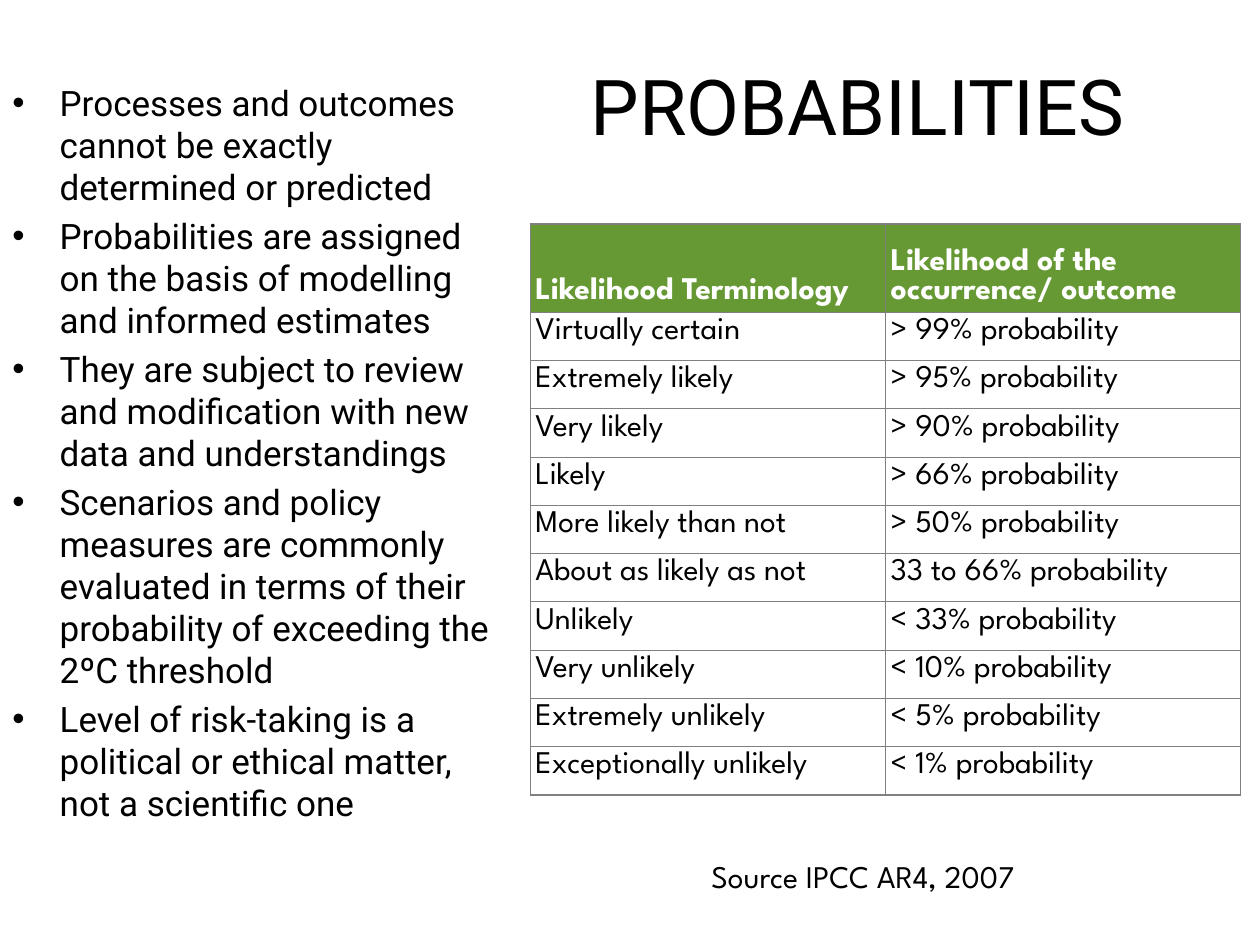
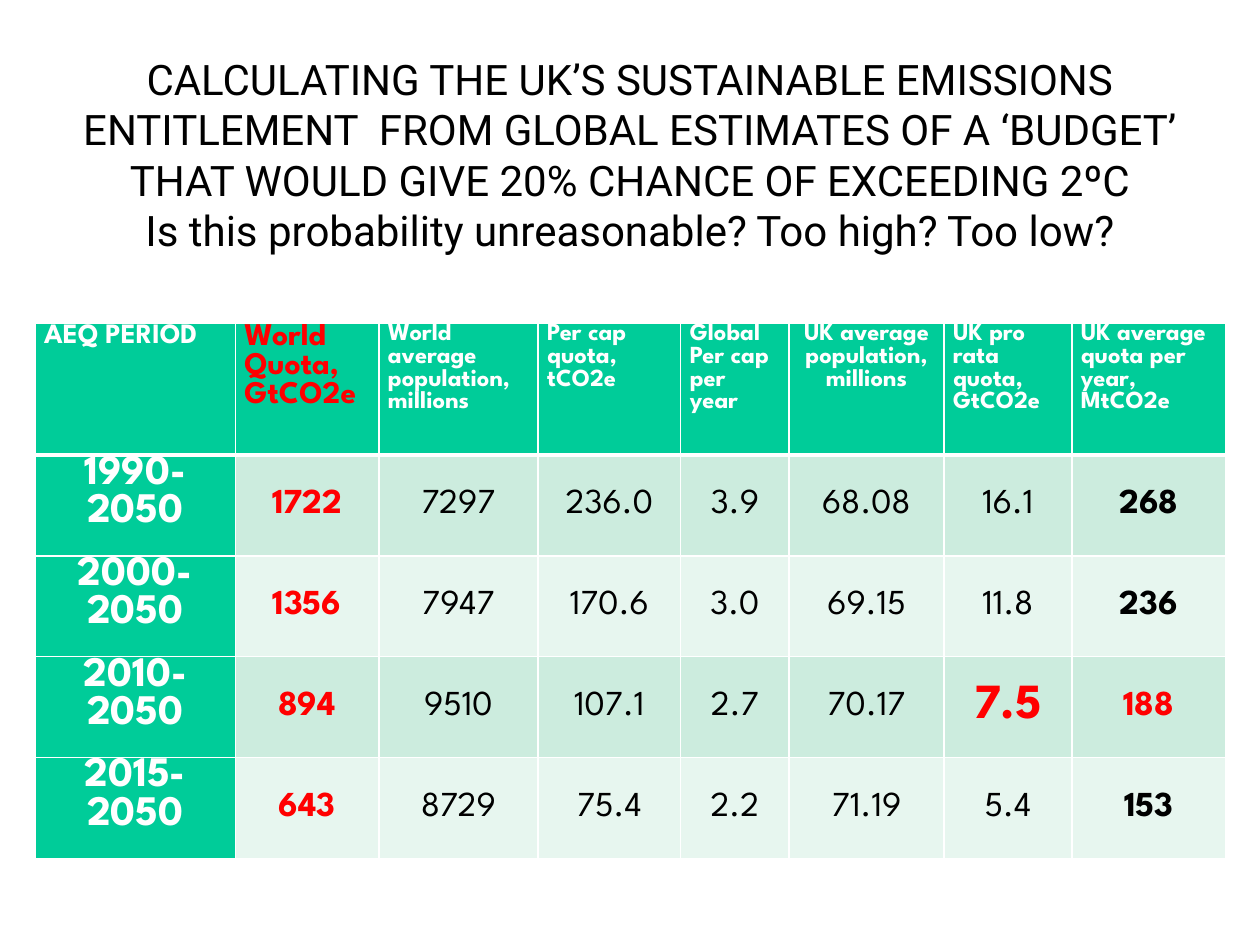
from lxml import etree
from pptx import Presentation
from pptx.dml.color import RGBColor
from pptx.enum.text import MSO_ANCHOR, PP_ALIGN
from pptx.oxml.ns import qn
from pptx.util import Pt

LEFT, CENTER = PP_ALIGN.LEFT, PP_ALIGN.CENTER
TOP, MIDDLE, BOTTOM = MSO_ANCHOR.TOP, MSO_ANCHOR.MIDDLE, MSO_ANCHOR.BOTTOM

# Shared style
TITLE_FONT, TABLE_FONT = "Roboto", "League Spartan"
BLACK, WHITE, RED, GREY = "000000", "FFFFFF", "FF0000", "808080"
OLIVE, TEAL = "669933", "00CC99"
BANDS = ["CCECDE", "E7F6EF"]

# Slide 1 content
PROBABILITY_POINTS = [
    "Processes and outcomes cannot be exactly determined or predicted",
    "Probabilities are assigned on the basis of modelling and informed estimates",
    "They are subject to review and modification with new data and understandings",
    "Scenarios and policy measures are commonly evaluated in terms of their "
    "probability of exceeding the 2ºC threshold",
    "Level of risk-taking is a political or ethical matter, not a scientific one",
]
LIKELIHOODS = [
    ("Likelihood Terminology", "Likelihood of the occurrence/ outcome"),
    ("Virtually certain", "> 99% probability"),
    ("Extremely likely", "> 95% probability"),
    ("Very likely", "> 90% probability"),
    ("Likely", "> 66% probability"),
    ("More likely than not", "> 50% probability"),
    ("About as likely as not", "33 to 66% probability"),
    ("Unlikely", "< 33% probability"),
    ("Very unlikely", "< 10% probability"),
    ("Extremely unlikely", "< 5% probability"),
    ("Exceptionally unlikely", "< 1% probability"),
]

# Slide 2 content
BUDGET_TITLE = [
    "CALCULATING THE UK’S SUSTAINABLE EMISSIONS ENTITLEMENT  FROM GLOBAL "
    "ESTIMATES OF A ‘BUDGET’ THAT WOULD GIVE 20% CHANCE OF EXCEEDING 2ºC",
    "Is this probability unreasonable? Too high? Too low?",
]
BUDGET_HEADINGS = [
    ["AEQ PERIOD"], ["World Quota, GtCO2e"],
    ["World", "average population, millions"], ["Per cap quota, tCO2e"],
    ["Global Per cap per year"], ["UK average population,", "millions"],
    ["UK pro rata quota, GtCO2e"], ["UK average quota per year, MtCO2e"],
]
BUDGET_ROWS = [
    ("1990-2050", "1722", "7297", "236.0", "3.9", "68.08", "16.1", "268"),
    ("2000-2050", "1356", "7947", "170.6", "3.0", "69.15", "11.8", "236"),
    ("2010-2050", "894", "9510", "107.1", "2.7", "70.17", "7.5", "188"),
    ("2015-2050", "643", "8729", "75.4", "2.2", "71.19", "5.4", "153"),
]
BUDGET_WIDTHS = [114.5, 82, 91, 81.5, 62, 88.5, 73, 88]
PERIOD, WORLD_QUOTA, UK_POPULATION, UK_YEARLY = 0, 1, 5, 7
HIGHLIGHTS = {"7.5": 28, "188": 20}


def color(hex_code):
    return RGBColor.from_string(hex_code)


def add_run(paragraph, text, size, font, ink=BLACK, bold=False):
    run = paragraph.add_run()
    run.text = text
    run.font.size = Pt(size)
    run.font.name = font
    run.font.bold = bold
    run.font.color.rgb = color(ink)


def next_paragraph(frame, index):
    return frame.paragraphs[0] if index == 0 else frame.add_paragraph()


def add_text_frame(slide, left, top, width, height, anchor=TOP):
    box = slide.shapes.add_textbox(Pt(left), Pt(top), Pt(width), Pt(height))
    box.text_frame.word_wrap = True
    box.text_frame.vertical_anchor = anchor
    return box.text_frame


def add_title(slide, lines, size, left, top, width):
    paragraph = add_text_frame(slide, left, top, width, 90, MIDDLE).paragraphs[0]
    paragraph.alignment = CENTER
    for index, line in enumerate(lines):
        if index:
            paragraph.add_line_break()
        add_run(paragraph, line, size, TITLE_FONT)


def add_bullets(slide, points, left, top, width, height):
    frame = add_text_frame(slide, left, top, width, height)
    for index, point in enumerate(points):
        paragraph = next_paragraph(frame, index)
        paragraph.space_before = Pt(4)
        add_run(paragraph, point, 20, TITLE_FONT)
        properties = paragraph._p.get_or_add_pPr()
        properties.set("marL", str(Pt(27)))
        properties.set("indent", str(-Pt(27)))
        etree.SubElement(properties, qn("a:buFont"), typeface="Arial")
        etree.SubElement(properties, qn("a:buChar"), char="•")


def add_plain_table(slide, left, top, widths, heights):
    frame = slide.shapes.add_table(len(heights), len(widths), Pt(left), Pt(top),
                                   Pt(sum(widths)), Pt(sum(heights)))
    table = frame.table
    table.first_row = table.horz_banding = False
    for column, width in zip(table.columns, widths):
        column.width = Pt(width)
    for row, height in zip(table.rows, heights):
        row.height = Pt(height)
    return table


def set_borders(cell, ink, width, top=None, bottom=None):
    properties = cell._tc.get_or_add_tcPr()
    sides = {"lnL": width, "lnR": width, "lnT": top or width, "lnB": bottom or width}
    for side, side_width in sides.items():
        line = etree.SubElement(properties, qn("a:" + side), w=str(Pt(side_width)))
        fill = etree.SubElement(line, qn("a:solidFill"))
        etree.SubElement(fill, qn("a:srgbClr"), val=ink)


def fill_cell(cell, lines, fill, size, ink, bold, insets, anchor=TOP, align=LEFT):
    cell.fill.solid()
    cell.fill.fore_color.rgb = color(fill)
    cell.vertical_anchor = anchor
    side, end = insets
    cell.margin_left = cell.margin_right = Pt(side)
    cell.margin_top = cell.margin_bottom = Pt(end)
    for index, line in enumerate(lines):
        paragraph = next_paragraph(cell.text_frame, index)
        paragraph.alignment = align
        add_run(paragraph, line, size, TABLE_FONT, ink, bold)


def add_likelihood_table(slide):
    heights = [40.3] + [22.5] * (len(LIKELIHOODS) - 1)
    table = add_plain_table(slide, 303, 128, [203, 203], heights)
    for row, texts in enumerate(LIKELIHOODS):
        for column, text in enumerate(texts):
            cell = table.cell(row, column)
            set_borders(cell, GREY, 0.75)
            if row == 0:
                fill_cell(cell, [text], OLIVE, 18, WHITE, True, (3, 3.6), BOTTOM)
            else:
                fill_cell(cell, [text], WHITE, 18, BLACK, False, (3, 3))


def budget_text_style(column, text):
    """Return size, colour and weight of a value in the budget table."""
    if text in HIGHLIGHTS:
        return HIGHLIGHTS[text], RED, True
    if column == PERIOD:
        return 24, WHITE, True
    if column == WORLD_QUOTA:
        return 20, RED, True
    return 20, BLACK, column == UK_YEARLY


def add_budget_table(slide):
    insets = (5.2, 0)
    heights = [75] + [44.2] * len(BUDGET_ROWS)
    table = add_plain_table(slide, 20, 185, BUDGET_WIDTHS, heights)
    # Heading row
    for column, lines in enumerate(BUDGET_HEADINGS):
        cell = table.cell(0, column)
        set_borders(cell, WHITE, 1, bottom=3)
        size = {PERIOD: 16, WORLD_QUOTA: 18}.get(column, 14)
        ink = RED if column == WORLD_QUOTA else WHITE
        align = CENTER if column == UK_POPULATION else LEFT
        fill_cell(cell, lines, TEAL, size, ink, True, insets, align=align)
    # Banded value rows
    for row, values in enumerate(BUDGET_ROWS):
        for column, text in enumerate(values):
            cell = table.cell(row + 1, column)
            set_borders(cell, WHITE, 1, top=3 if row == 0 else 1)
            fill = TEAL if column == PERIOD else BANDS[row % 2]
            anchor = TOP if column == PERIOD else MIDDLE
            size, ink, bold = budget_text_style(column, text)
            fill_cell(cell, [text], fill, size, ink, bold, insets, anchor, CENTER)


def main():
    presentation = Presentation()
    presentation.slide_width, presentation.slide_height = Pt(720), Pt(540)
    blank = presentation.slide_layouts[6]

    # Slide 1: probability terms
    slide = presentation.slides.add_slide(blank)
    add_title(slide, ["PROBABILITIES"], 44, 314.5, 15, 351.5)
    add_bullets(slide, PROBABILITY_POINTS, 0, 43, 289, 324)
    add_likelihood_table(slide)
    source = add_text_frame(slide, 399.5, 486, 244, 29)
    add_run(source.paragraphs[0], "Source IPCC AR4, 2007", 18, TABLE_FONT)

    # Slide 2: emissions budget
    slide = presentation.slides.add_slide(blank)
    add_title(slide, BUDGET_TITLE, 24, 14, 43, 692)
    add_budget_table(slide)

    presentation.save("out.pptx")


if __name__ == "__main__":
    main()
